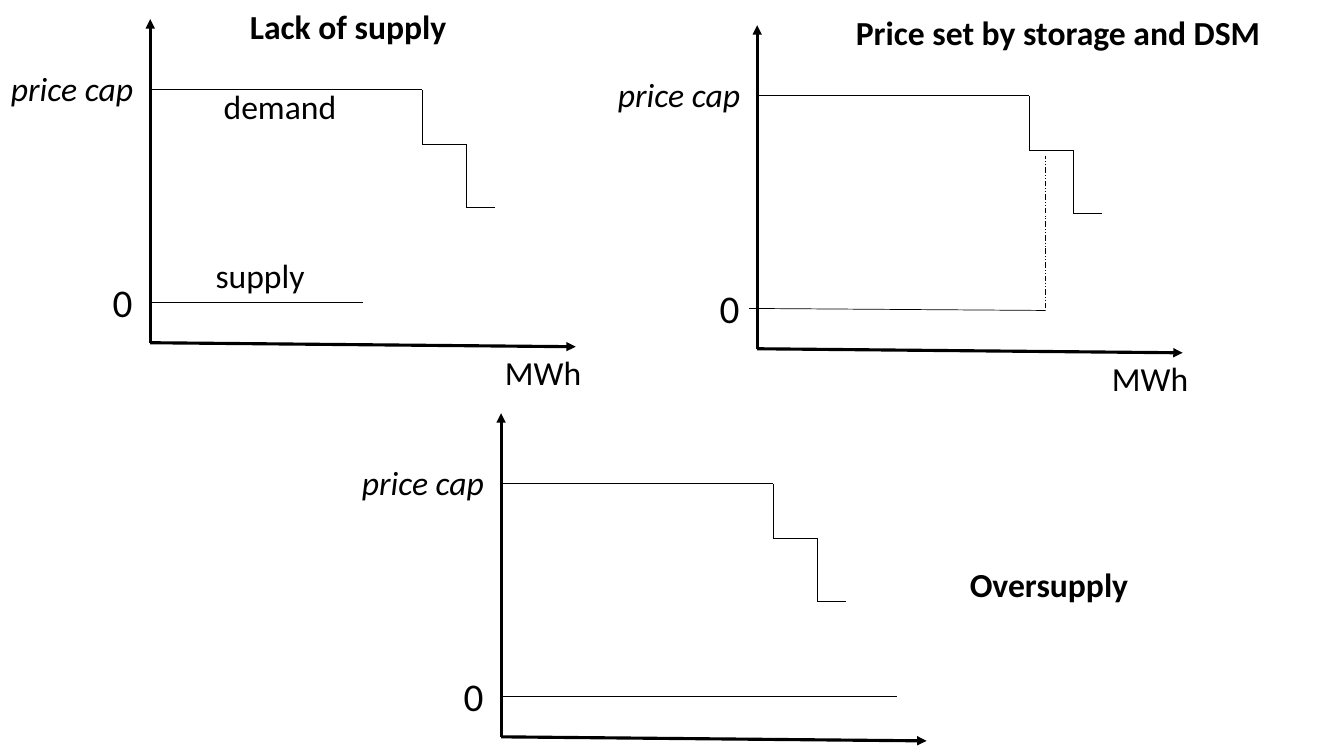
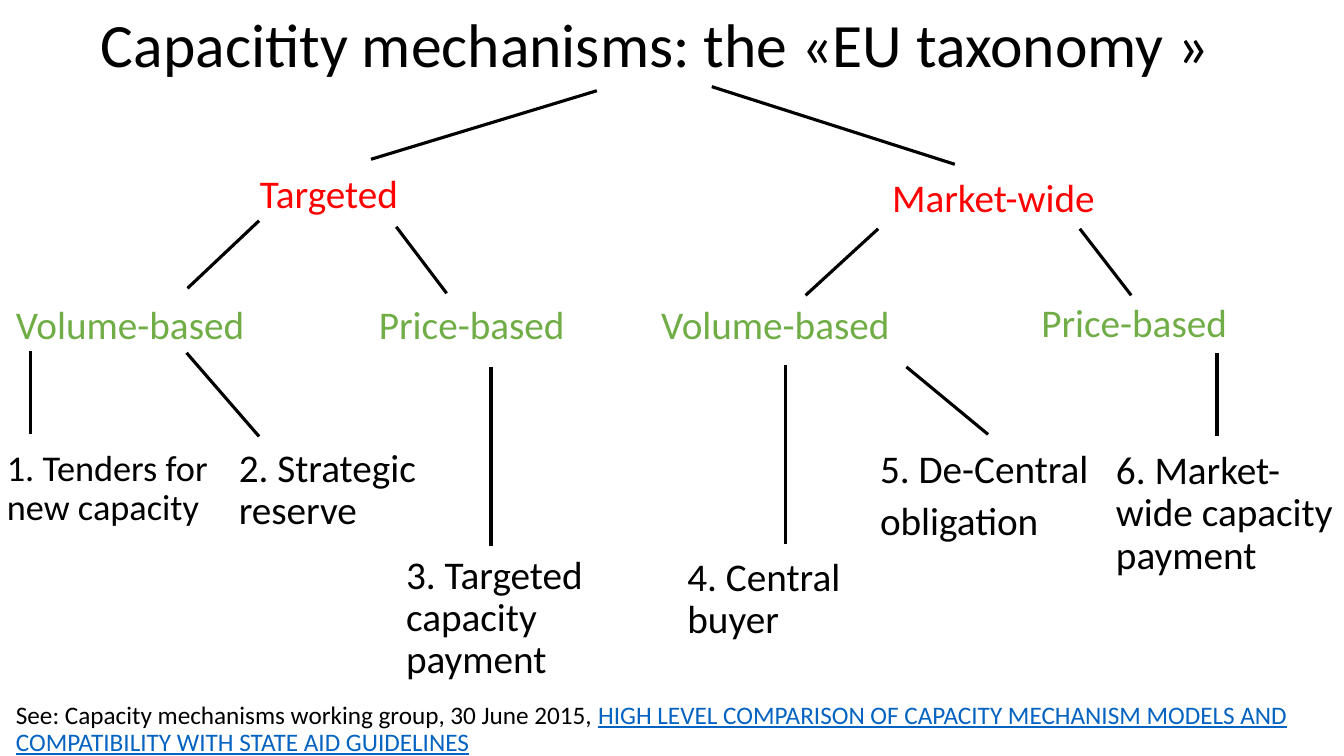
"""Build two slides: electricity price formation and the capacity mechanism tree."""
from itertools import pairwise

from lxml import etree
from pptx import Presentation
from pptx.dml.color import RGBColor
from pptx.enum.dml import MSO_LINE
from pptx.enum.shapes import MSO_CONNECTOR
from pptx.enum.text import MSO_ANCHOR, PP_ALIGN
from pptx.oxml.ns import qn
from pptx.util import Inches, Pt

BLACK = RGBColor(0x00, 0x00, 0x00)
RED = RGBColor(0xFF, 0x00, 0x00)
GREEN = RGBColor(0x70, 0xAD, 0x47)
LINK_BLUE = RGBColor(0x05, 0x63, 0xC1)
FONT = "Calibri"
STRAIGHT = MSO_CONNECTOR.STRAIGHT
DASH_DOT_DOT = MSO_LINE.DASH_DOT_DOT
TOP, BOTTOM = MSO_ANCHOR.TOP, MSO_ANCHOR.BOTTOM
CENTER = PP_ALIGN.CENTER

THICK, THIN = 2.25, 0.5
LABEL_W = 2.53

AXIS_ENDS = [(4.22, 0.04), (0, -3.21)]
DEMAND = [(0, -2.51), (2.7, -2.51), (2.7, -1.97), (3.14, -1.97),
          (3.14, -1.34), (3.42, -1.34)]
AXIS_LABELS = [
    ("0", (-0.47, -0.69), 0.4, {"size": Pt(28)}),
    ("price cap", (-1.48, -2.78), LABEL_W, {"italic": True}),
]
UNIT_LABEL = ("MWh", (3.42, 0.04), LABEL_W, {})
BOLD = {"bold": True}

PANELS = [
    {"origin": (1.49, 3.4), "supply": [(0, -0.4), (2.11, -0.4)],
     "labels": [UNIT_LABEL,
                ("Lack of supply", (0.89, -3.39), LABEL_W, BOLD),
                ("demand", (0.63, -2.6), LABEL_W, {}),
                ("supply", (0.55, -0.92), LABEL_W, {})]},
    {"origin": (7.51, 3.46), "supply": [(-0.08, -0.4), (2.86, -0.38)],
     "clearing": [(2.86, -0.4), (2.86, -1.91)],
     "labels": [UNIT_LABEL,
                ("Price set by storage and DSM", (0.88, -3.39), 4.39, BOLD)]},
    {"origin": (4.97, 7.31), "supply": [(0, -0.4), (3.93, -0.4)],
     "labels": [("Oversupply", (4.55, -1.76), LABEL_W, BOLD)]},
]

TITLE = "Capacitity mechanisms: the «EU taxonomy »"
BRANCHES = [
    ("Targeted", 2.48, 1.63, RED),
    ("Market-wide", 8.75, 1.67, RED),
    ("Volume-based", 0.06, 2.93, GREEN),
    ("Price-based", 3.66, 2.93, GREEN),
    ("Volume-based", 6.46, 2.93, GREEN),
    ("Price-based", 10.23, 2.91, GREEN),
]
MECHANISMS = [
    (["1. Tenders for new capacity"], (-0.03, 4.42, 2.34, 1), 25.9, 0.9),
    (["2. Strategic reserve"], (2.27, 4.4, 2.34, 1), 28, 0.9),
    (["3. Targeted capacity payment"], (3.93, 5.46, 2.53, 1.69), 28, 0.9),
    (["4. Central buyer"], (6.72, 5.48, 2.53, 1), 28, 0.9),
    (["5. De-Central", "obligation"], (8.63, 4.45, 2.34, 1), 28, 0.8),
    (["6. Market-wide capacity payment"], (10.97, 4.42, 2.53, 1.69), 28, 0.9),
]
EDGES = [
    ((5.92, 0.9), (3.68, 1.58)), ((7.06, 0.86), (9.47, 1.63)),
    ((2.57, 2.19), (1.86, 2.86)), ((3.93, 2.25), (4.43, 2.91)),
    ((8.71, 2.27), (7.99, 2.93)), ((10.71, 2.27), (11.22, 2.93)),
    ((0.3, 3.48), (0.3, 4.31)), ((1.85, 3.5), (2.57, 4.33)),
    ((4.87, 3.64), (4.87, 5.42)), ((7.79, 3.62), (7.79, 5.4)),
    ((8.99, 3.64), (9.8, 4.31)), ((12.07, 3.5), (12.07, 4.33)),
]
SOURCE = [
    ("See: Capacity mechanisms working group, 30 June 2015, ", {}),
    ("HIGH LEVEL COMPARISON OF CAPACITY MECHANISM MODELS AND "
     "COMPATIBILITY WITH STATE AID GUIDELINES",
     {"color": LINK_BLUE, "underline": True}),
]
BODY = {"line_spacing": 0.9, "space_before": Pt(10)}


def add_line(s, start, end, width, dash=None, arrow=False):
    """Draw a straight black line, with an arrowhead at its end if asked."""
    sp = s.shapes.add_connector(STRAIGHT, *map(Inches, (*start, *end)))
    sp.line.color.rgb = BLACK
    sp.line.width = Pt(width)
    if dash:
        sp.line.dash_style = dash
    if arrow:
        ln = sp._element.spPr.find(qn("a:ln"))
        etree.SubElement(ln, qn("a:tailEnd"), type="triangle")
    etree.SubElement(sp._element.spPr, qn("a:effectLst"))


def add_text(s, box, paragraphs, font=None, para=None, anchor=TOP):
    """Write paragraphs, each a list of (text, format) runs, in a wrapped box."""
    tf = s.shapes.add_textbox(*map(Inches, box)).text_frame
    tf.word_wrap = True
    tf.vertical_anchor = anchor
    for i, runs in enumerate(paragraphs):
        p = tf.add_paragraph() if i else tf.paragraphs[0]
        for name, value in (para or {}).items():
            setattr(p, name, value)
        for text, own in runs:
            r = p.add_run()
            r.text = text
            look = {"name": FONT, "size": Pt(24), "color": BLACK, **(font or {}), **own}
            r.font.color.rgb = look.pop("color")
            for name, value in look.items():
                setattr(r.font, name, value)


def add_panel(s, panel):
    """Draw one price diagram relative to its origin."""
    x0, y0 = panel["origin"]

    def place(point):
        return x0 + point[0], y0 + point[1]

    for end in AXIS_ENDS:
        add_line(s, (x0, y0), place(end), THICK, arrow=True)
    for start, end in [*pairwise(DEMAND), panel["supply"]]:
        add_line(s, place(start), place(end), THIN)
    if "clearing" in panel:
        add_line(s, *map(place, panel["clearing"]), THIN, dash=DASH_DOT_DOT)
    for text, offset, width, font in AXIS_LABELS + panel["labels"]:
        add_text(s, (*place(offset), width, 0.5), [[(text, font)]])


def add_tree(s):
    """Draw the title, the taxonomy tree and its source."""
    add_text(s, (0.09, 0, 12.83, 0.85), [[(TITLE, {"size": Pt(44)})]],
             para={"alignment": CENTER, "line_spacing": 0.9}, anchor=BOTTOM)
    for start, end in EDGES:
        add_line(s, start, end, THICK)
    for text, x, y, color in BRANCHES:
        add_text(s, (x, y, LABEL_W, 0.57), [[(text, {"size": Pt(28), "color": color})]])
    for lines, box, size, spacing in MECHANISMS:
        add_text(s, box, [[(line, {})] for line in lines], {"size": Pt(size)},
                 {**BODY, "line_spacing": spacing})
    add_text(s, (0.06, 6.92, 12.9, 0.58), [SOURCE], {"size": Pt(18)}, BODY)


def main():
    """Build and save the presentation."""
    prs = Presentation()
    prs.slide_width, prs.slide_height = Inches(13.33), Inches(7.5)
    blank = prs.slide_layouts[6]
    s = prs.slides.add_slide(blank)
    for panel in PANELS:
        add_panel(s, panel)
    add_tree(prs.slides.add_slide(blank))
    prs.save("out.pptx")


if __name__ == "__main__":
    main()
